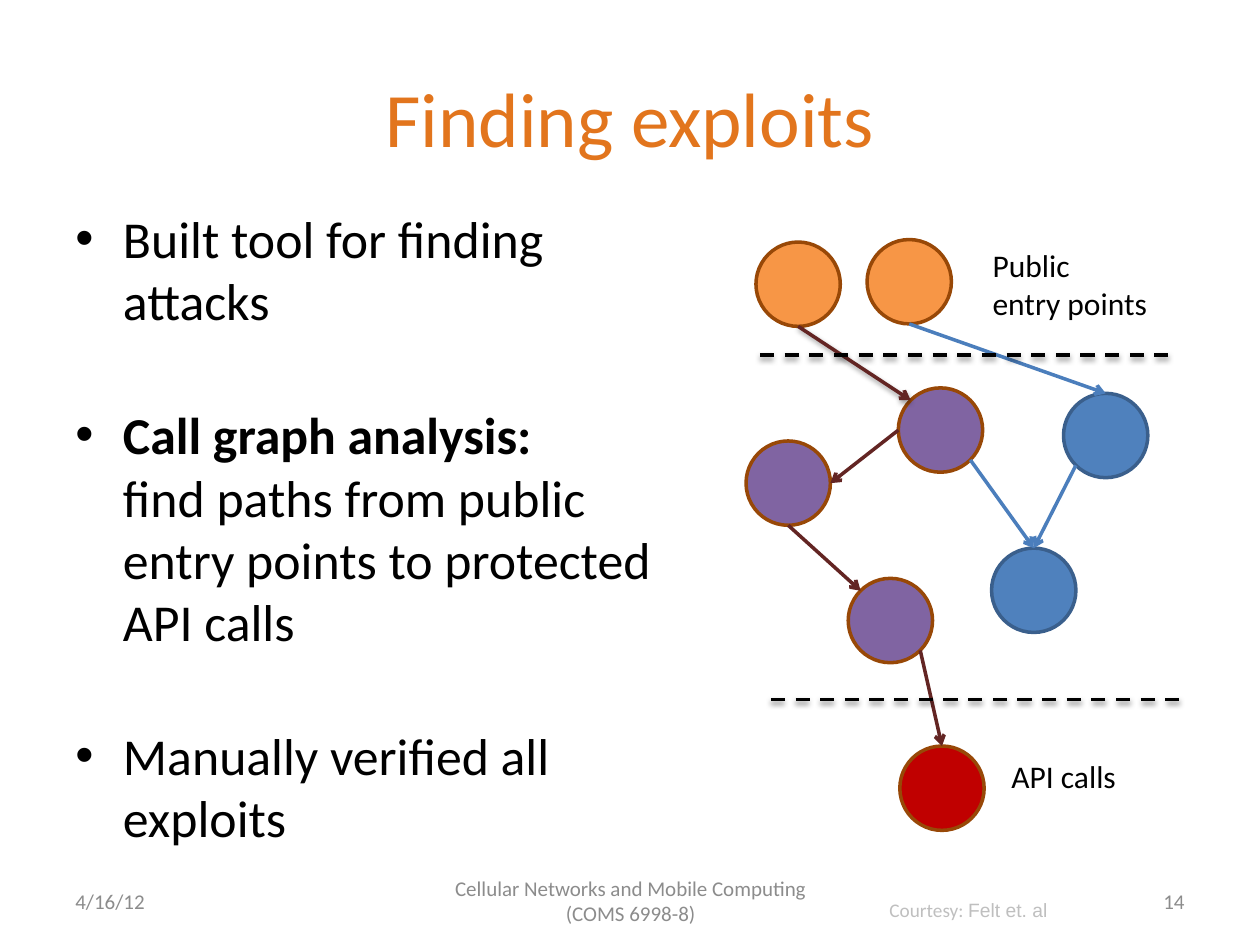
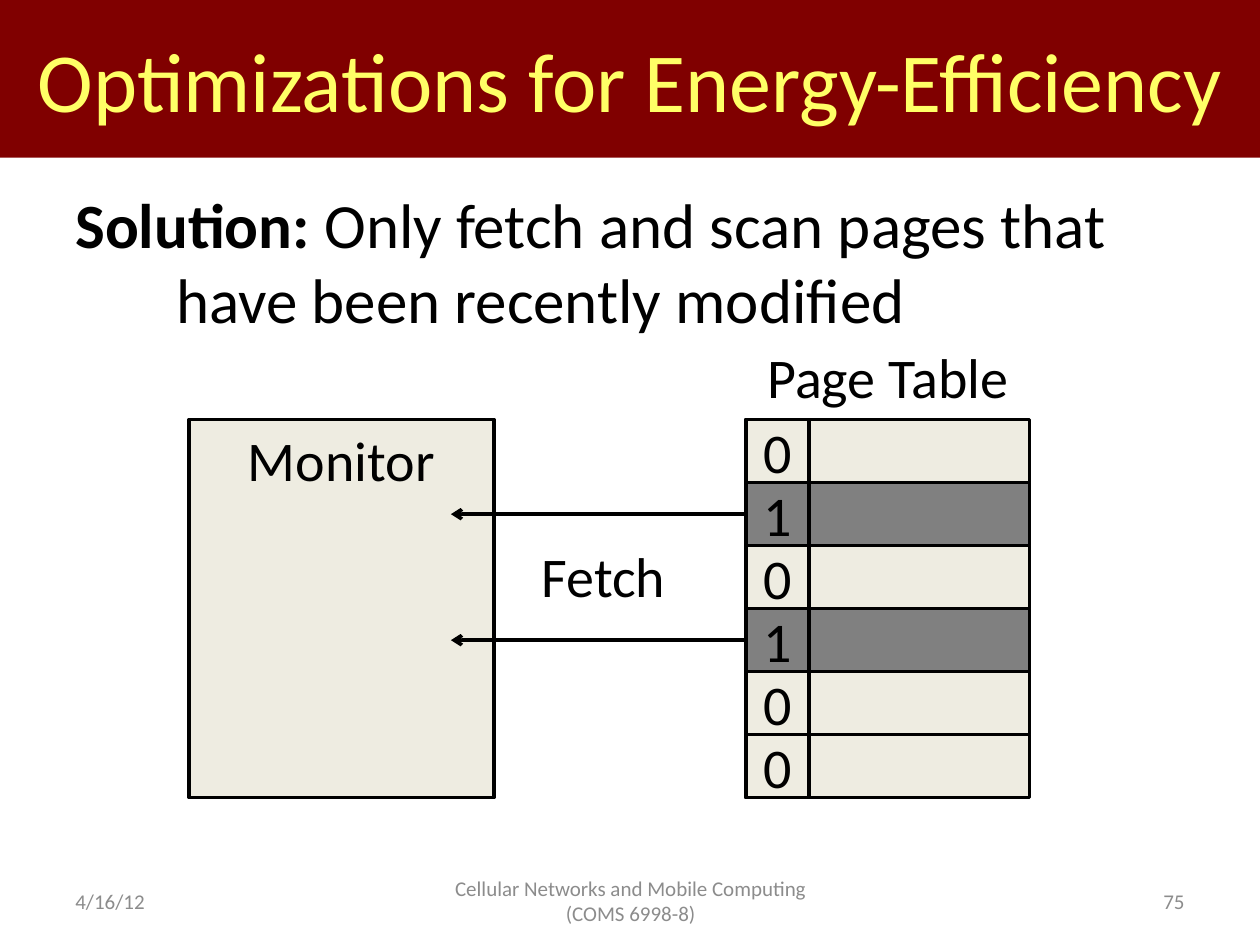
"""Build two course slides: a call graph and a page table diagram."""
import math

import lxml.etree
import pptx
import pptx.dml.color
import pptx.enum.dml
import pptx.enum.shapes
import pptx.enum.text
import pptx.oxml.ns
import pptx.util

Cm = pptx.util.Cm
Pt = pptx.util.Pt
qn = pptx.oxml.ns.qn
Form = pptx.enum.shapes.MSO_SHAPE
Align = pptx.enum.text.PP_ALIGN
Anchor = pptx.enum.text.MSO_ANCHOR

HUES = {
    "ink": "000000", "title": "E2751D", "foot": "8C8C8C", "faint": "BFBFBF",
    "band": "800000", "glow": "FFFF66", "sand": "EEECE1", "grey": "808080",
    "blue": "4F81BD", "navy": "3A5F8C", "sky": "4B7EBC", "orange": "F79646",
    "rust": "984807", "plum": "8064A2", "red": "C00000", "wine": "632523",
}
RADIUS = 0.85


def hue(name):
    return pptx.dml.color.RGBColor.from_string(HUES[name])


def put(par, text, size=18, color="ink", bold=False, font="Calibri"):
    for at, part in enumerate(text.split("\n")):
        if at:
            par.add_line_break()
        if part:
            run = par.add_run()
            run.text = part
            run.font.size = Pt(size)
            run.font.bold = bold
            run.font.name = font
            run.font.color.rgb = hue(color)


def rim(spot, angle):
    turn = math.radians(angle)
    return spot[0] + RADIUS * math.cos(turn), spot[1] + RADIUS * math.sin(turn)


class Deck:
    def __init__(self):
        self.show = pptx.Presentation()
        self.show.slide_width = Cm(25.4)
        self.show.slide_height = Cm(19.05)
        self.slide = None

    def start(self, number):
        self.slide = self.show.slides.add_slide(self.show.slide_layouts[6])
        foot = {"anchor": Anchor.MIDDLE, "size": 12, "color": "foot"}
        self.text((1.27, 17.65, 5.92, 1.02), "4/16/12", **foot)
        self.text((8.69, 17.65, 8.05, 1.02),
                  "Cellular Networks and Mobile Computing (COMS 6998-8)",
                  align=Align.CENTER, **foot)
        self.text((18.21, 17.65, 5.92, 1.02), number, align=Align.RIGHT, **foot)

    def fill(self, frame, *pars, align=Align.LEFT, anchor=Anchor.TOP, wrap=True, **form):
        frame.word_wrap = wrap
        frame.vertical_anchor = anchor
        for at, runs in enumerate(pars):
            par = frame.add_paragraph() if at else frame.paragraphs[0]
            par.alignment = align
            for text, more in [(runs, {})] if isinstance(runs, str) else runs:
                put(par, text, **{**form, **more})
        return frame

    def text(self, box, *pars, **form):
        shape = self.slide.shapes.add_textbox(*map(Cm, box))
        return self.fill(shape.text_frame, *pars, **form)

    def indent(self, par, left, bullet=None):
        props = par._p.get_or_add_pPr()
        props.set("marL", str(Cm(left)))
        props.set("indent", str(-Cm(left)))
        if bullet:
            lxml.etree.SubElement(props, qn("a:buFont"), typeface="Arial")
            lxml.etree.SubElement(props, qn("a:buChar"), char=bullet)

    def shape(self, box, color, edge="ink", form=Form.RECTANGLE):
        shape = self.slide.shapes.add_shape(form, *map(Cm, box))
        shape.shadow.inherit = False
        shape.fill.solid()
        shape.fill.fore_color.rgb = hue(color)
        if edge:
            shape.line.color.rgb = hue(edge)
            shape.line.width = Pt(2)
        else:
            shape.line.fill.background()
        return shape.text_frame

    def node(self, spot, color, edge):
        x, y = spot
        self.shape((x - RADIUS, y - RADIUS, 2 * RADIUS, 2 * RADIUS), color, edge, Form.OVAL)

    def line(self, start, end, color="ink", dash=False, shade=False):
        line = self.slide.shapes.add_connector(
            pptx.enum.shapes.MSO_CONNECTOR.STRAIGHT, *map(Cm, (*start, *end)))
        line.line.color.rgb = hue(color)
        line.line.width = Pt(2)
        props = line._element.spPr
        if dash:
            line.line.dash_style = pptx.enum.dml.MSO_LINE.DASH
        else:
            lxml.etree.SubElement(props.find(qn("a:ln")), qn("a:tailEnd"), type="arrow")
        effects = lxml.etree.SubElement(props, qn("a:effectLst"))
        if shade:
            cast = lxml.etree.SubElement(
                effects, qn("a:outerShdw"), blurRad=str(Pt(3.1)), dist=str(Pt(1.6)),
                dir="5400000", rotWithShape="0")
            tone = lxml.etree.SubElement(cast, qn("a:srgbClr"), val=HUES["ink"])
            lxml.etree.SubElement(tone, qn("a:alpha"), val="38000")


def graph(deck):
    deck.start("14")
    deck.text((1.27, 0.76, 22.86, 3.18), "Finding exploits", align=Align.CENTER,
              anchor=Anchor.MIDDLE, size=44, color="title")
    body = deck.text(
        (1.27, 4.45, 12.52, 13.54),
        "Built tool for finding attacks",
        [("Call graph analysis:\n", {"bold": True}),
         ("find paths from public entry points to protected API calls", {})],
        "Manually verified all exploits",
        anchor=Anchor.MIDDLE, size=29.6)
    body.margin_bottom = Cm(1.3)
    for at, par in enumerate(body.paragraphs):
        par.line_spacing = Pt(35.6)
        par.space_before = Pt(41 if at else 0)
        deck.indent(par, 0.96, "•")

    nodes = {
        "entry": ((16.09, 5.73), "orange", "rust"),
        "public": ((18.33, 5.68), "orange", "rust"),
        "hub": ((18.96, 8.67), "plum", "rust"),
        "left": ((15.89, 9.74), "plum", "rust"),
        "low": ((17.95, 12.51), "plum", "rust"),
        "call": ((18.99, 15.89), "red", "rust"),
        "right": ((22.29, 8.78), "blue", "navy"),
        "sink": ((20.84, 11.9), "blue", "navy"),
    }
    for node in nodes.values():
        deck.node(*node)
    links = [
        ("public", 90, "right", 270, "sky"),
        ("hub", 45, "sink", 270, "sky"),
        ("right", 135, "sink", 270, "sky"),
        ("entry", 90, "hub", 225, "wine"),
        ("hub", 180, "left", 0, "wine"),
        ("left", 90, "low", 225, "wine"),
        ("low", 45, "call", 270, "wine"),
    ]
    for tail, out, head, into, color in links:
        deck.line(rim(nodes[tail][0], out), rim(nodes[head][0], into), color,
                  shade=tail == "entry")
    for x, y in ((15.32, 7.16), (15.54, 14.1)):
        deck.line((x, y), (x + 8.23, y), dash=True, shade=True)

    deck.text((19.76, 4.83, 3.84, 1.8), "Public", "entry points", wrap=False)
    deck.text((20.14, 15.14, 3.05, 1.02), "API calls", wrap=False)
    deck.text((17.68, 17.98, 3.73, 0.74),
              [("Courtesy: ", {}), ("Felt et. al", {"font": "Arial"})],
              wrap=False, size=11, color="faint")


def pages(deck):
    deck.start("75")
    mid = {"align": Align.CENTER, "anchor": Anchor.MIDDLE}
    label = {"align": Align.CENTER, "size": 32}
    band = deck.shape((0, 0, 25.4, 3.18), "band", None)
    deck.fill(band, "Optimizations for Energy-Efficiency", size=48, color="glow", **mid)
    lead = deck.text((1.27, 3.61, 24.13, 3.33),
                     [("Solution: ", {"bold": True}),
                      ("Only fetch and scan pages that\nhave been recently modified", {})],
                     size=36)
    deck.indent(lead.paragraphs[0], 2.03)

    left, top, side = 15.04, 8.46, 1.27
    deck.fill(deck.shape((3.81, top, 6.15, 6 * side), "sand"), "Monitor", **label)
    deck.text((left, 6.78, 5.72, 1.63), "Page Table", **label)
    deck.text((9.73, 10.8, 4.88, 1.63), "Fetch", **label)
    for row, bit in enumerate("010100"):
        y = top + row * side
        color = "grey" if bit == "1" else "sand"
        deck.shape((left, y, 5.72, side), color)
        deck.fill(deck.shape((left, y, side, side), color), bit, size=32, **mid)
        if bit == "1":
            deck.line((left, y + side / 2), (9.09, y + side / 2))


def main():
    deck = Deck()
    graph(deck)
    pages(deck)
    deck.show.save("out.pptx")


if __name__ == "__main__":
    main()
